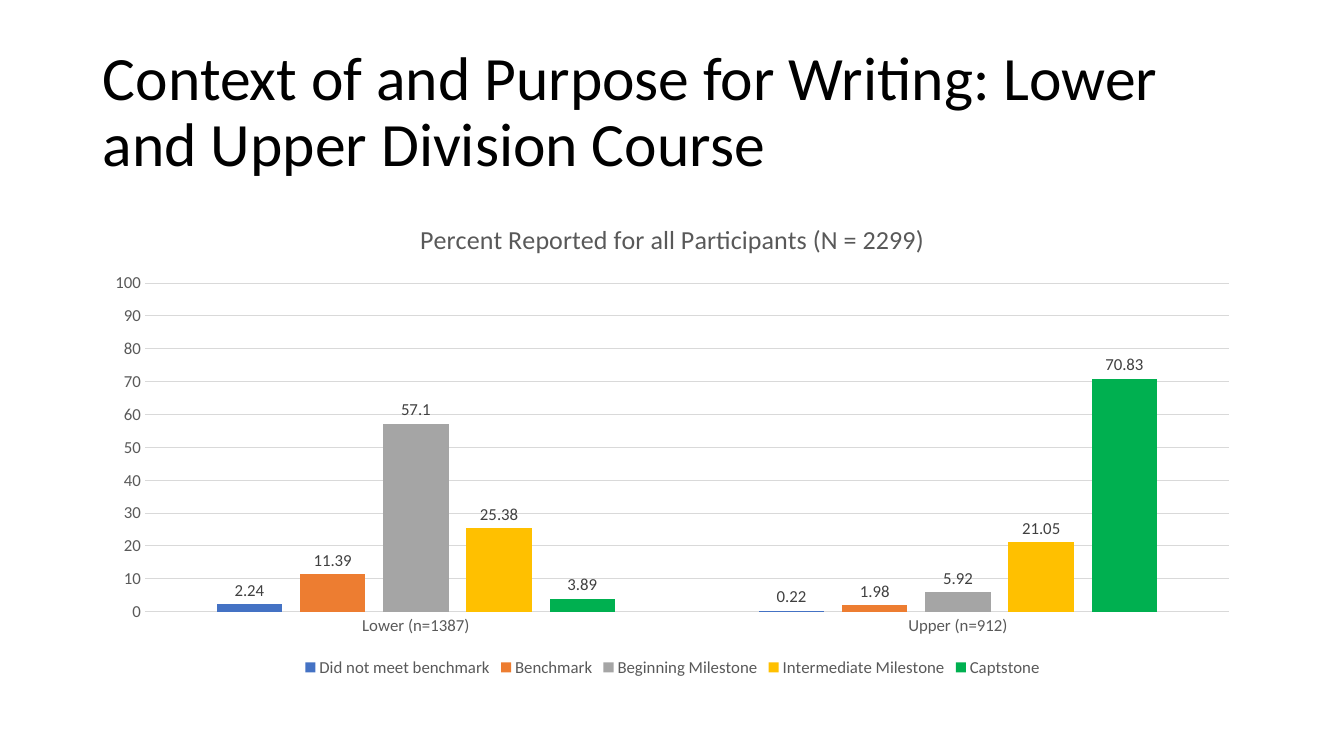
from lxml import etree
from pptx import Presentation, util as u
from pptx.chart.data import CategoryChartData
from pptx.dml.color import RGBColor
from pptx.enum import chart as ch, text

COLORS = {
    "title": "000000", "muted": "595959", "label": "404040", "grid": "D9D9D9",
    "Did not meet benchmark": "4472C4", "Benchmark": "ED7D31",
    "Beginning Milestone": "A5A5A5", "Intermediate Milestone": "FFC000",
    "Captstone": "00B050",
}
DIVISIONS = ["Lower (n=1387)", "Upper (n=912)"]
RATINGS = {
    "Did not meet benchmark": (2.24, 0.22),
    "Benchmark": (11.39, 1.98),
    "Beginning Milestone": (57.1, 5.92),
    "Intermediate Milestone": (25.38, 21.05),
    "Captstone": (3.89, 70.83),
}
PLOT_AREA = {"x": 0.045, "y": 0.17, "w": 0.935, "h": 0.685}


class SlideBuilder:
    """Holds the style and the slide; boxes are inches on the slide."""
    face = "Calibri"

    def __init__(self, deck):
        self.slide = deck.slides.add_slide(deck.slide_layouts[5])

    def style(self, font, size, color):
        font.name, font.size, font.bold = self.face, u.Pt(size), False
        font.color.rgb = RGBColor.from_string(COLORS[color])

    def rule(self, line):
        line.width = u.Pt(0.75)
        line.color.rgb = RGBColor.from_string(COLORS["grid"])

    def title(self, wording, box):
        heading = self.slide.shapes.title
        heading.left, heading.top, heading.width, heading.height = map(u.Inches, box)
        frame = heading.text_frame
        frame.word_wrap = True
        frame.auto_size = text.MSO_AUTO_SIZE.NONE
        frame.vertical_anchor = text.MSO_ANCHOR.MIDDLE
        line = frame.paragraphs[0]
        line.alignment, line.line_spacing = text.PP_ALIGN.LEFT, 0.9
        run = line.add_run()
        run.text = wording
        self.style(run.font, 44, "title")

    def column_chart(self, caption, categories, ratings, box):
        data = CategoryChartData()
        data.categories = categories
        for rating, percents in ratings.items():
            data.add_series(rating, percents)
        chart = self.slide.shapes.add_chart(
            ch.XL_CHART_TYPE.COLUMN_CLUSTERED, *map(u.Inches, box), data).chart
        self.style(chart.font, 12, "muted")

        # Chart title
        chart.has_title = True
        run = chart.chart_title.text_frame.paragraphs[0].add_run()
        run.text = caption
        self.style(run.font, 18.6, "muted")
        chart.chart_title.include_in_layout = False

        # Legend
        chart.has_legend = True
        chart.legend.position = ch.XL_LEGEND_POSITION.BOTTOM
        chart.legend.include_in_layout = False
        self.style(chart.legend.font, 12, "muted")

        # Axes
        for axis in (chart.category_axis, chart.value_axis):
            axis.major_tick_mark = axis.minor_tick_mark = ch.XL_TICK_MARK.NONE
            self.style(axis.tick_labels.font, 12, "muted")
        self.rule(chart.category_axis.format.line)
        percent_axis = chart.value_axis
        percent_axis.minimum_scale, percent_axis.maximum_scale = 0, 100
        percent_axis.major_unit = 10
        percent_axis.format.line.fill.background()
        self.rule(percent_axis.major_gridlines.format.line)

        # Columns and their values
        columns = chart.plots[0]
        columns.gap_width, columns.overlap, columns.vary_by_categories = 219, -27, False
        for series in columns.series:
            series.invert_if_negative = False
            series.format.fill.solid()
            series.format.fill.fore_color.rgb = RGBColor.from_string(COLORS[series.name])
            labels = series.data_labels
            labels.show_value = True
            labels.position = ch.XL_LABEL_POSITION.OUTSIDE_END
            self.style(labels.font, 12, "label")
        self.place_plot(chart)

    def place_plot(self, chart):
        """Fix the inner plot area as shares of the chart's size."""
        ns = "{http://schemas.openxmlformats.org/drawingml/2006/chart}"
        plot = chart.element.find(f".//{ns}plotArea")
        for old in plot.findall(f"{ns}layout"):
            plot.remove(old)
        layout = etree.Element(f"{ns}layout")
        manual = etree.SubElement(layout, f"{ns}manualLayout")
        settings = {"layoutTarget": "inner", "xMode": "edge", "yMode": "edge", **PLOT_AREA}
        for tag, setting in settings.items():
            etree.SubElement(manual, ns + tag).set("val", str(setting))
        plot.insert(0, layout)


def main():
    deck = Presentation()
    deck.slide_width, deck.slide_height = u.Inches(13.33), u.Inches(7.5)
    page = SlideBuilder(deck)
    left, width = 0.92, 11.5
    page.title("Context of and Purpose for Writing: Lower and Upper Division Course",
               (left, 0.4, width, 1.45))
    page.column_chart("Percent Reported for all Participants (N = 2299)",
                      DIVISIONS, RATINGS, (left, 2, width, 4.76))
    deck.save("out.pptx")


if __name__ == "__main__":
    main()
